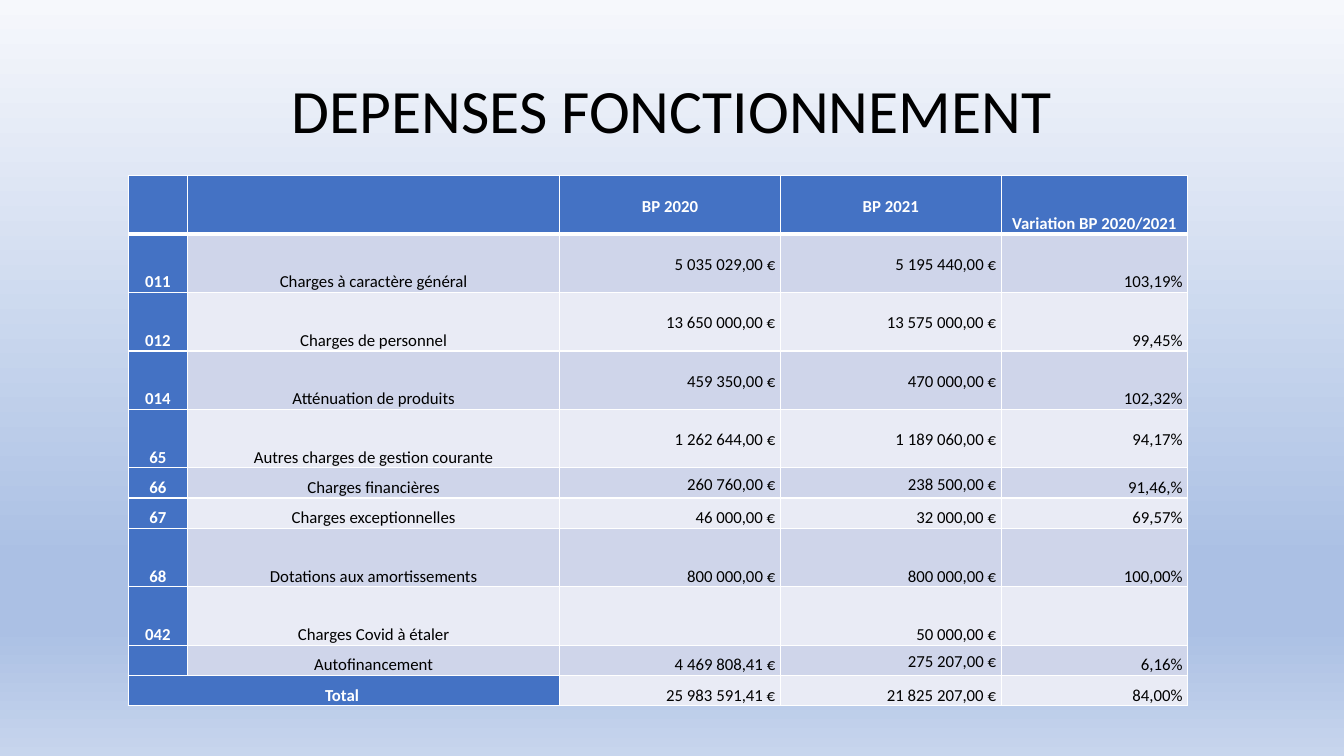
import pptx
import pptx.dml.color
import pptx.enum.text
import pptx.oxml
import pptx.oxml.ns
import pptx.util
from lxml import etree

Pt = pptx.util.Pt
ALIGN = pptx.enum.text.PP_ALIGN
ANCHORS = {
    "m": pptx.enum.text.MSO_ANCHOR.MIDDLE,
    "b": pptx.enum.text.MSO_ANCHOR.BOTTOM,
}

# Header and budget rows: height, vertical anchor of each cell, cell texts
TALL, SHORT = 41.76, 21.6
ROWS = [
    (TALL, "mmmmb", ["", "", "BP 2020", "BP 2021", "Variation BP 2020/2021"]),
    (TALL, "bbmmb", ["011", "Charges à caractère général",
                     "5 035 029,00 €", "5 195 440,00 €", "103,19%"]),
    (TALL, "bbmmb", ["012", "Charges de personnel",
                     "13 650 000,00 €", "13 575 000,00 €", "99,45%"]),
    (TALL, "bbmmb", ["014", "Atténuation de produits",
                     "459 350,00 €", "470 000,00 €", "102,32%"]),
    (TALL, "bbmmm", ["65", "Autres charges de gestion courante",
                     "1 262 644,00 €", "1 189 060,00 €", "94,17%"]),
    (SHORT, "bbmmb", ["66", "Charges financières",
                      "260 760,00 €", "238 500,00 €", "91,46,%"]),
    (SHORT, "bbbbb", ["67", "Charges exceptionnelles",
                      "46 000,00 €", "32 000,00 €", "69,57%"]),
    (TALL, "bbbbb", ["68", "Dotations aux amortissements",
                     "800 000,00 €", "800 000,00 €", "100,00%"]),
    (TALL, "bbbbb", ["042", "Charges Covid à étaler", "", "50 000,00 €", ""]),
    (SHORT, "bbbmb", ["", "Autofinancement",
                      "4 469 808,41 €", "275 207,00 €", "6,16%"]),
    (SHORT, "bbbbb", ["Total ", "",
                      "25 983 591,41 €", "21 825 207,00 €", "84,00%"]),
]
COLUMN_WIDTHS = [42.5, 265.7, 157.7, 157.7, 133.2]


def color(hex_string):
    return pptx.dml.color.RGBColor.from_string(hex_string)


class BudgetSlide:
    font = "Calibri"
    black, white, blue = "000000", "FFFFFF", "4472C4"
    bands = ["E9EBF5", "CFD5EA"]

    def __init__(self, presentation):
        self.slide = presentation.slides.add_slide(presentation.slide_layouts[5])

    def background(self, stops):
        stop_xml = "".join(
            f'<a:gs pos="{position * 1000}"><a:srgbClr val="{value}"/></a:gs>'
            for position, value in stops)
        background = pptx.oxml.parse_xml(
            f'<p:bg {pptx.oxml.ns.nsdecls("p", "a")}><p:bgPr><a:gradFill>'
            f'<a:gsLst>{stop_xml}</a:gsLst><a:lin ang="5400000" scaled="0"/>'
            '</a:gradFill><a:effectLst/></p:bgPr></p:bg>')
        self.slide.element.find(pptx.oxml.ns.qn("p:cSld")).insert(0, background)

    def add_text(self, paragraph, text, size, hex_string, bold, alignment, spacing):
        paragraph.alignment = alignment
        paragraph.line_spacing = spacing
        run = paragraph.add_run()
        run.text = text
        run.font.name = self.font
        run.font.size = Pt(size)
        run.font.bold = bold
        run.font.color.rgb = color(hex_string)

    def title(self, text, left, top, width, height):
        shape = self.slide.shapes.title
        shape.left, shape.top = Pt(left), Pt(top)
        shape.width, shape.height = Pt(width), Pt(height)
        frame = shape.text_frame
        frame.word_wrap = True
        frame.auto_size = pptx.enum.text.MSO_AUTO_SIZE.NONE
        frame.vertical_anchor = ANCHORS["m"]
        self.add_text(frame.paragraphs[0], text, 44, self.black, False,
                      ALIGN.CENTER, 0.9)

    def borders(self, cell, top, bottom):
        properties = cell._tc.get_or_add_tcPr()
        for side, width in (("L", 1), ("R", 1), ("T", top), ("B", bottom)):
            properties.append(pptx.oxml.parse_xml(
                f'<a:ln{side} {pptx.oxml.ns.nsdecls("a")} w="{Pt(width)}">'
                f'<a:solidFill><a:srgbClr val="{self.white}"/></a:solidFill>'
                f'</a:ln{side}>'))

    def cell(self, cell, text, row, column, anchor, is_label):
        self.borders(cell, 3 if row == 1 else 1, 3 if row == 0 else 1)
        cell.fill.solid()
        cell.fill.fore_color.rgb = color(
            self.blue if is_label else self.bands[row % 2])
        cell.margin_left = cell.margin_right = Pt(3.6)
        cell.margin_top = cell.margin_bottom = Pt(0)
        cell.vertical_anchor = ANCHORS[anchor]
        paragraph = cell.text_frame.paragraphs[0]
        if text:
            paragraph.space_after = Pt(10)
            self.add_text(paragraph, text, 12,
                          self.white if is_label else self.black, is_label,
                          ALIGN.CENTER if is_label or column == 1 else ALIGN.RIGHT,
                          1.15)
        else:
            # Keeps an empty cell from stretching its row
            etree.SubElement(paragraph._p, pptx.oxml.ns.qn("a:endParaRPr"), sz="1200")

    def table(self, rows, widths, left, top):
        table = self.slide.shapes.add_table(
            len(rows), len(widths), Pt(left), Pt(top), Pt(sum(widths)),
            Pt(sum(height for height, _, _ in rows))).table
        for column, width in enumerate(widths):
            table.columns[column].width = Pt(width)
        last = len(rows) - 1
        for row, (height, anchors, texts) in enumerate(rows):
            table.rows[row].height = Pt(height)
            for column, (anchor, text) in enumerate(zip(anchors, texts)):
                is_label = row == 0 or column == 0 or (row == last and column == 1)
                self.cell(table.cell(row, column), text, row, column,
                          anchor, is_label)
        table.cell(last, 0).merge(table.cell(last, 1))


def main():
    presentation = pptx.Presentation()
    presentation.slide_width, presentation.slide_height = Pt(960), Pt(540)
    budget = BudgetSlide(presentation)

    # Background and title
    budget.background([(0, "F6F8FC"), (74, "ABC0E4"), (83, "ABC0E4"),
                       (100, "C7D5ED")])
    budget.title("DEPENSES FONCTIONNEMENT", 66, 28.75, 828, 104.4)

    # Budget table
    budget.table(ROWS, COLUMN_WIDTHS, 91.6, 125.4)

    presentation.save("out.pptx")


if __name__ == "__main__":
    main()
